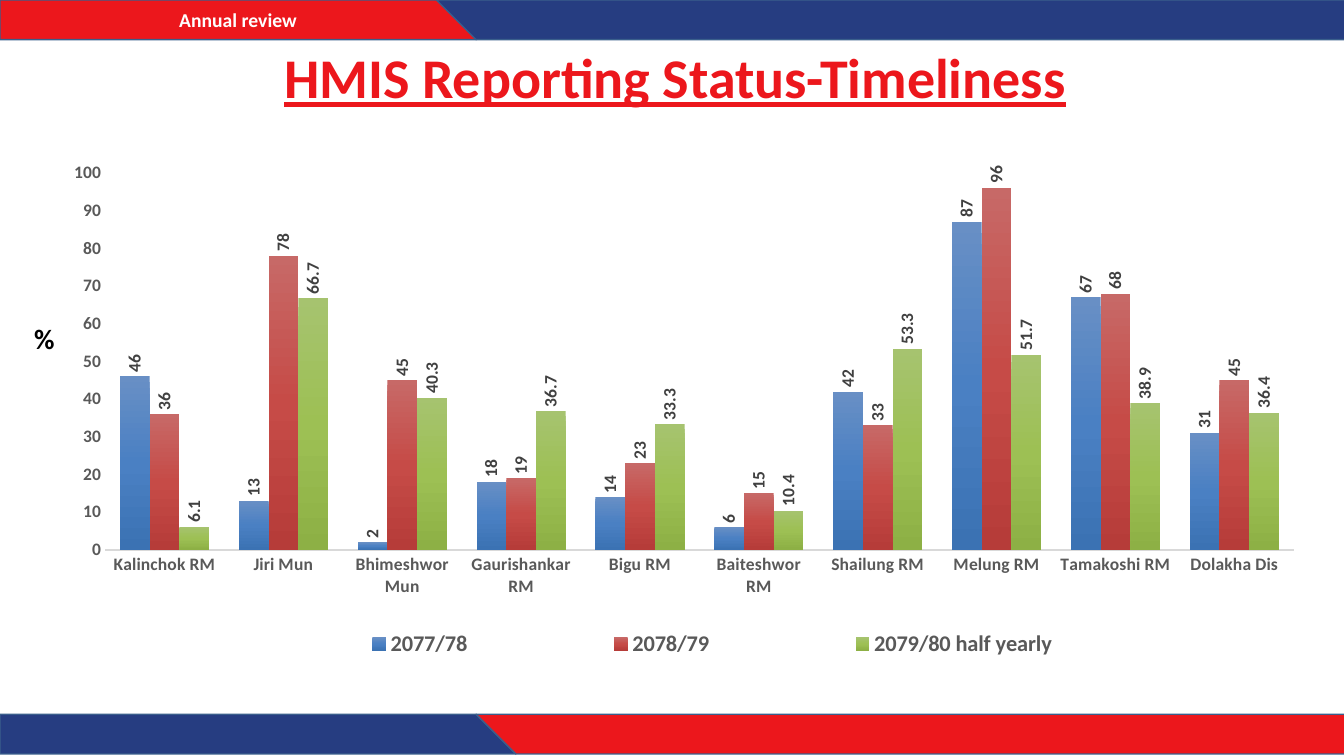
from dataclasses import dataclass

from lxml.etree import SubElement
from pptx import Presentation
from pptx.chart.data import CategoryChartData
from pptx.dml.color import RGBColor
from pptx.enum.chart import XL_CHART_TYPE, XL_LABEL_POSITION, XL_LEGEND_POSITION, XL_TICK_MARK
from pptx.enum.text import MSO_ANCHOR, PP_ALIGN
from pptx.oxml.ns import qn
from pptx.util import Cm, Pt

FONT = "Calibri"
RED = RGBColor(0xEC, 0x17, 0x1C)
NAVY = RGBColor(0x26, 0x3D, 0x81)
OUTLINE = RGBColor(0x3A, 0x5F, 0x8C)
WHITE = RGBColor(0xFF, 0xFF, 0xFF)
BLACK = RGBColor(0, 0, 0)
AXIS_TEXT = RGBColor(0x59, 0x59, 0x59)
LABEL_TEXT = RGBColor(0x40, 0x40, 0x40)
AXIS_LINE = RGBColor(0xD9, 0xD9, 0xD9)


@dataclass
class Band:
    points: list[tuple[float, float]]  # centimetres
    color: RGBColor
    text: str = ""


@dataclass
class Year:
    name: str
    values: list[float]
    gradient: tuple[RGBColor, RGBColor, RGBColor]
    label_format: str = "#,##0"


BANDS = [
    Band([(0.1, 0.1), (11.13, 0.08), (12.29, 0.81), (0.1, 0.81)], RED, "Annual review"),
    Band([(0.1, 17.75), (11.61, 17.78), (12.88, 18.97), (0.1, 18.97)], NAVY),
    Band([(11.91, 17.78), (33.78, 17.75), (33.78, 18.9), (13.16, 18.97)], RED),
    Band([(11.46, 0.13), (33.78, 0.18), (33.78, 0.84), (12.47, 0.79)], NAVY),
]

MUNICIPALITIES = [
    "Kalinchok RM", "Jiri Mun", "Bhimeshwor Mun", "Gaurishankar RM", "Bigu RM",
    "Baiteshwor RM", "Shailung RM", "Melung RM", "Tamakoshi RM", "Dolakha Dis",
]

YEARS = [
    Year("2077/78", [46, 13, 2, 18, 14, 6, 42, 87, 67, 31],
         (RGBColor(0x68, 0x8F, 0xC5), RGBColor(0x4A, 0x80, 0xC3), RGBColor(0x3B, 0x72, 0xB3))),
    Year("2078/79", [36, 78, 45, 19, 23, 15, 33, 96, 68, 45],
         (RGBColor(0xC7, 0x69, 0x67), RGBColor(0xC6, 0x4B, 0x47), RGBColor(0xB6, 0x3C, 0x39))),
    Year("2079/80 half yearly", [6.1, 66.7, 40.3, 36.7, 33.3, 10.4, 53.3, 51.7, 38.9, 36.4],
         (RGBColor(0xA6, 0xC3, 0x6F), RGBColor(0x9D, 0xC0, 0x54), RGBColor(0x8D, 0xB0, 0x45)),
         "General"),
]


def style_font(font, size: float, color: RGBColor) -> None:
    font.name = FONT
    font.size = Pt(size)
    font.bold = True
    font.color.rgb = color


def add_run(p, text: str, size: float, color: RGBColor):
    r = p.add_run()
    r.text = text
    style_font(r.font, size, color)
    return r


def add_band(slide, band: Band) -> None:
    builder = slide.shapes.build_freeform(*band.points[0], scale=Cm(1))
    builder.add_line_segments(band.points[1:], close=True)
    sp = builder.convert_to_shape()
    sp.shadow.inherit = False
    sp.fill.solid()
    sp.fill.fore_color.rgb = band.color
    sp.line.color.rgb = OUTLINE
    sp.line.width = Pt(1)
    if band.text:
        tf = sp.text_frame
        tf.vertical_anchor = MSO_ANCHOR.MIDDLE
        p = tf.paragraphs[0]
        p.alignment = PP_ALIGN.CENTER
        add_run(p, band.text, 14, WHITE)


def add_title(slide, text: str) -> None:
    sp = slide.shapes.title
    sp.left, sp.top, sp.width, sp.height = Cm(1.63), Cm(0.66), Cm(30.76), Cm(2.74)
    tf = sp.text_frame
    tf.vertical_anchor = MSO_ANCHOR.MIDDLE
    p = tf.paragraphs[0]
    p.alignment = PP_ALIGN.CENTER
    p.line_spacing = 0.9
    add_run(p, text, 40, RED).font.underline = True


def add_unit(slide, text: str) -> None:
    sp = slide.shapes.add_textbox(Cm(0.61), Cm(7.98), Cm(1.04), Cm(1.12))
    sp.text_frame.word_wrap = False
    add_run(sp.text_frame.paragraphs[0], text, 20, BLACK)


def set_layout(parent, index: int, x: float, y: float, w: float, h: float,
               inner: bool = False) -> None:
    """Place a chart part by fractions of the chart, as child number index."""
    for old in parent.findall(qn("c:layout")):
        parent.remove(old)
    layout = SubElement(parent, qn("c:layout"))
    parent.insert(index, layout)
    manual = SubElement(layout, qn("c:manualLayout"))
    settings = [("xMode", "edge"), ("yMode", "edge"), ("x", x), ("y", y), ("w", w), ("h", h)]
    if inner:
        settings.insert(0, ("layoutTarget", "inner"))
    for tag, value in settings:
        SubElement(manual, qn(f"c:{tag}")).set("val", str(value))


def style_series(ser, year: Year) -> None:
    fill = ser.format.fill
    fill.gradient()
    fill.gradient_angle = 270
    stops = ser._element.find(".//" + qn("a:gsLst"))
    for stop in list(stops):
        stops.remove(stop)
    for pos, color in zip((0, 50000, 100000), year.gradient):
        stop = SubElement(stops, qn("a:gs"), pos=str(pos))
        SubElement(stop, qn("a:srgbClr"), val=str(color))

    labels = ser.data_labels
    style_font(labels.font, 12.5, LABEL_TEXT)
    labels.number_format = year.label_format
    labels.number_format_is_linked = False
    labels.position = XL_LABEL_POSITION.OUTSIDE_END
    labels.show_value = True
    body = labels._element.find(".//" + qn("a:bodyPr"))
    body.set("rot", "-5400000")
    body.set("vert", "horz")


def add_timeliness_chart(slide) -> None:
    data = CategoryChartData()
    data.categories = MUNICIPALITIES
    for year in YEARS:
        data.add_series(year.name, year.values)
    chart = slide.shapes.add_chart(XL_CHART_TYPE.COLUMN_CLUSTERED, Cm(1.04), Cm(3.38),
                                   Cm(32.21), Cm(13.97), data).chart
    chart.has_title = False
    style_font(chart.font, 12.5, BLACK)

    plot = chart.plots[0]
    plot.gap_width = 100
    plot.overlap = 0
    plot.vary_by_categories = False
    for ser, year in zip(plot.series, YEARS):
        style_series(ser, year)

    for axis in (chart.category_axis, chart.value_axis):
        axis.has_major_gridlines = False
        axis.major_tick_mark = axis.minor_tick_mark = XL_TICK_MARK.NONE
        style_font(axis.tick_labels.font, 12.5, AXIS_TEXT)
    chart.category_axis.format.line.color.rgb = AXIS_LINE
    chart.category_axis.format.line.width = Pt(1)
    values = chart.value_axis
    values.format.line.fill.background()
    values.minimum_scale, values.maximum_scale, values.major_unit = 0, 100, 10

    chart.has_legend = True
    legend = chart.legend
    legend.position = XL_LEGEND_POSITION.BOTTOM
    legend.include_in_layout = False
    style_font(legend.font, 16, AXIS_TEXT)
    set_layout(legend._element, 1, 0.15, 0.88, 0.75, 0.08)
    plot_area = chart._chartSpace.chart.plotArea
    set_layout(plot_area, 0, 0.05, 0.07, 0.93, 0.68, inner=True)


def main() -> None:
    prs = Presentation()
    prs.slide_width, prs.slide_height = Cm(33.87), Cm(19.05)
    slide = prs.slides.add_slide(prs.slide_layouts[5])
    for band in BANDS:
        add_band(slide, band)
    add_title(slide, "HMIS Reporting Status-Timeliness")
    add_unit(slide, "%")
    add_timeliness_chart(slide)
    prs.save("out.pptx")


if __name__ == "__main__":
    main()
